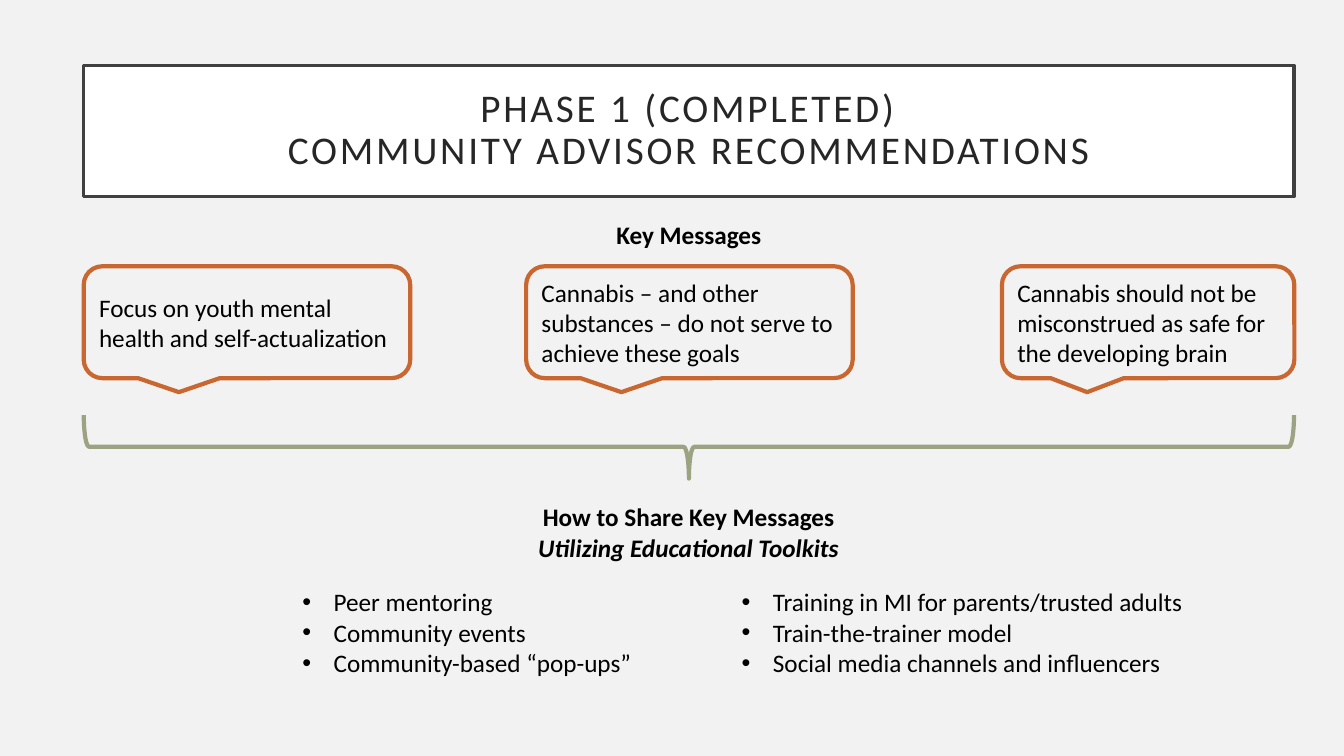
from copy import deepcopy
from dataclasses import dataclass

from lxml.etree import SubElement
from pptx import Presentation
from pptx.dml.color import RGBColor
from pptx.enum.shapes import MSO_SHAPE
from pptx.enum.text import MSO_ANCHOR, MSO_AUTO_SIZE, PP_ALIGN
from pptx.oxml.ns import qn
from pptx.shapes.autoshape import Shape
from pptx.slide import Slide
from pptx.text.text import TextFrame
from pptx.util import Cm, Pt

MARGIN, CONTENT_WIDTH = 2.11, 30.5
CALLOUT_TOP, CALLOUT_HEIGHT = 6.71, 2.82
LIST_TOP, LIST_HEIGHT, LIST_INDENT = 14.66, 2.57, 0.79
ORANGE, SAGE, BLACK = "C96731", "9CA383", "000000"

BODY = {"size": Pt(18), "name": "Calibri"}
HEADING = BODY | {"bold": True}
SUBHEADING = HEADING | {"italic": True}
TITLE = {"size": Pt(28), "name": "Calibri"}


@dataclass
class Message:
    left: float
    width: float
    text: str


@dataclass
class Heading:
    left: float
    top: float
    width: float
    height: float
    lines: list[tuple[str, dict]]


@dataclass
class Channels:
    left: float
    width: float
    items: list[str]


MESSAGES = [
    Message(MARGIN, 8.23, "Focus on youth mental health and self-actualization"),
    Message(13.26, 8.23, "Cannabis – and other substances – do not serve to achieve these goals"),
    Message(25.25, 7.37, "Cannabis should not be misconstrued as safe for \nthe developing brain"),
]
HEADINGS = [
    Heading(15.06, 5.41, 4.6, 1.02, [("Key Messages", HEADING)]),
    Heading(11.46, 12.52, 11.79, 1.8, [
        ("How to Share Key Messages", HEADING),
        ("Utilizing Educational Toolkits", SUBHEADING),
    ]),
]
CHANNELS = [
    Channels(7.37, 9.19, ["Peer mentoring", "Community events", "Community-based “pop-ups”"]),
    Channels(18.44, 11.79, [
        "Training in MI for parents/trusted adults",
        "Train-the-trainer model",
        "Social media channels and influencers",
    ]),
]


def rgb(code: str) -> RGBColor:
    return RGBColor.from_string(code)


def write(frame: TextFrame, lines: list[tuple[str, dict]], align: PP_ALIGN,
          color: str = BLACK, spacing: int = 0, bulleted: bool = False) -> None:
    """Fill a frame with one paragraph per line, each in its own format."""
    frame.word_wrap = True
    for index, (text, style) in enumerate(lines):
        paragraph = frame.add_paragraph() if index else frame.paragraphs[0]
        paragraph.text = text
        paragraph.alignment = align
        for run in paragraph.runs:
            for attribute, value in style.items():
                setattr(run.font, attribute, value)
            run.font.color.rgb = rgb(color)
            if spacing:
                run._r.get_or_add_rPr().set("spc", str(spacing))
        # Line breaks take the size of the text around them
        for line_break in paragraph._p.findall(qn("a:br")):
            line_break.append(deepcopy(paragraph.runs[0]._r.rPr))
        if bulleted:
            properties = paragraph._p.get_or_add_pPr()
            properties.set("marL", str(Cm(LIST_INDENT)))
            properties.set("indent", str(-Cm(LIST_INDENT)))
            SubElement(properties, qn("a:buFont"), typeface="Arial")
            SubElement(properties, qn("a:buChar"), char="•")


def add_outline(slide: Slide, preset: MSO_SHAPE, left: float, top: float,
                width: float, height: float, color: str) -> Shape:
    outline = slide.shapes.add_shape(preset, Cm(left), Cm(top), Cm(width), Cm(height))
    outline.shadow.inherit = False
    outline.fill.background()
    outline.line.color.rgb = rgb(color)
    outline.line.width = Pt(3)
    return outline


def add_title(slide: Slide, text: str) -> None:
    title = slide.shapes.title
    title.left, title.top = Cm(MARGIN), Cm(1.65)
    title.width, title.height = Cm(CONTENT_WIDTH), Cm(3.3)
    title.fill.solid()
    title.fill.fore_color.rgb = rgb("FFFFFF")
    title.line.color.rgb = rgb("404040")
    title.line.width = Pt(2.5)
    frame = title.text_frame
    write(frame, [(text, TITLE)], PP_ALIGN.CENTER, "262626", spacing=200)
    frame.paragraphs[0].line_spacing = 0.9
    frame_format = {"auto_size": MSO_AUTO_SIZE.NONE, "vertical_anchor": MSO_ANCHOR.MIDDLE}
    frame_format |= {f"margin_{side}": Cm(0.5) for side in ("left", "top", "right", "bottom")}
    for attribute, value in frame_format.items():
        setattr(frame, attribute, value)


def add_message(slide: Slide, message: Message) -> None:
    callout = add_outline(slide, MSO_SHAPE.ROUNDED_RECTANGULAR_CALLOUT, message.left,
                          CALLOUT_TOP, message.width, CALLOUT_HEIGHT, ORANGE)
    callout.text_frame.vertical_anchor = MSO_ANCHOR.MIDDLE
    write(callout.text_frame, [(message.text, BODY)], PP_ALIGN.LEFT)


def add_heading(slide: Slide, heading: Heading) -> None:
    box = slide.shapes.add_textbox(Cm(heading.left), Cm(heading.top),
                                   Cm(heading.width), Cm(heading.height))
    write(box.text_frame, heading.lines, PP_ALIGN.CENTER)


def add_channels(slide: Slide, channels: Channels) -> None:
    box = slide.shapes.add_textbox(Cm(channels.left), Cm(LIST_TOP),
                                   Cm(channels.width), Cm(LIST_HEIGHT))
    write(box.text_frame, [(item, BODY) for item in channels.items],
          PP_ALIGN.LEFT, bulleted=True)


def main() -> None:
    deck = Presentation()
    deck.slide_width, deck.slide_height = Cm(33.87), Cm(19.05)
    slide = deck.slides.add_slide(deck.slide_layouts[5])
    slide.background.fill.solid()
    slide.background.fill.fore_color.rgb = rgb("F2F2F2")

    # Title
    add_title(slide, "PHASE 1 (COMPLETED)\nCOMMUNITY ADVISOR RECOMMENDATIONS")

    # Key messages, gathered by a brace turned to point down
    for message in MESSAGES:
        add_message(slide, message)
    brace = add_outline(slide, MSO_SHAPE.RIGHT_BRACE, 16.56, -3.99, 1.6, CONTENT_WIDTH, SAGE)
    brace.rotation = 90

    # Headings and the ways to share
    for heading in HEADINGS:
        add_heading(slide, heading)
    for channels in CHANNELS:
        add_channels(slide, channels)

    deck.save("out.pptx")


if __name__ == "__main__":
    main()
